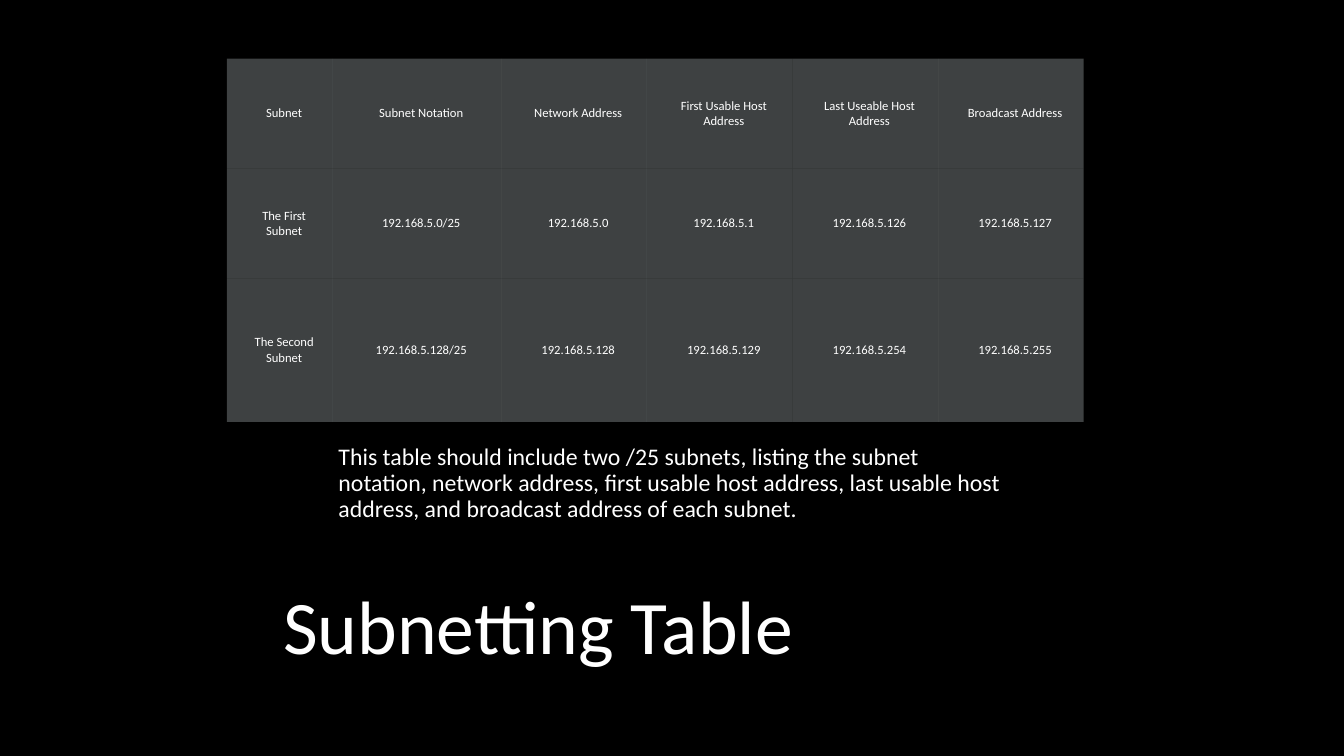
from dataclasses import dataclass

from lxml import etree
from pptx import Presentation
from pptx.dml.color import RGBColor
from pptx.enum.text import MSO_ANCHOR, MSO_AUTO_SIZE, PP_ALIGN
from pptx.oxml.ns import qn
from pptx.util import Cm, Pt

MIDDLE = MSO_ANCHOR.MIDDLE
NO_AUTOFIT = MSO_AUTO_SIZE.NONE
LEFT = PP_ALIGN.LEFT
CENTER = PP_ALIGN.CENTER

FONT = "Calibri"
COLORS = {"background": "000000", "text": "FFFFFF", "cell": "B4BCBE"}
CELL_OPACITY = 35
PLAIN_TABLE_STYLE = "{2D5ABB26-0587-4C30-8999-92F81FD0307C}"
ROW_HEIGHTS = (2.77, 2.77, 3.61)
CAPTION = (
    "This table should include two /25 subnets, listing the subnet notation, "
    "network address, first usable host address, last usable host address, "
    "and broadcast address of each subnet."
)


@dataclass(frozen=True)
class Column:
    width: float
    texts: tuple[str, str, str]


COLUMNS = (
    Column(2.67, ("Subnet", "The First Subnet", "The Second Subnet")),
    Column(4.24, ("Subnet Notation", "192.168.5.0/25", "192.168.5.128/25")),
    Column(3.67, ("Network Address", "192.168.5.0", "192.168.5.128")),
    Column(3.67, ("First Usable Host Address", "192.168.5.1", "192.168.5.129")),
    Column(3.67, ("Last Useable Host Address", "192.168.5.126", "192.168.5.254")),
    Column(3.67, ("Broadcast Address", "192.168.5.127", "192.168.5.255")),
)


def write_text(text_frame, text: str, *, size: float, align=LEFT,
               line_spacing: float = 1.0, space_after: float = 0) -> None:
    text_frame.word_wrap = True
    paragraph = text_frame.paragraphs[0]
    paragraph.text = text
    paragraph.alignment = align
    paragraph.line_spacing = line_spacing
    paragraph.space_before = Pt(0)
    paragraph.space_after = Pt(space_after)
    font = paragraph.runs[0].font
    font.name = FONT
    font.size = Pt(size)
    font.color.rgb = RGBColor.from_string(COLORS["text"])


def draw_cell(cell, text: str) -> None:
    cell.vertical_anchor = MIDDLE
    cell.margin_left = Cm(0.44)
    cell.margin_right = cell.margin_top = cell.margin_bottom = Cm(0.23)
    write_text(cell.text_frame, text, size=9, align=CENTER)
    cell.fill.solid()
    cell.fill.fore_color.rgb = RGBColor.from_string(COLORS["cell"])
    color = cell._tc.tcPr.find(f".//{qn('a:srgbClr')}")
    etree.SubElement(color, qn("a:alpha"), val=str(CELL_OPACITY * 1000))


def draw_subnet_table(slide) -> None:
    width = sum(column.width for column in COLUMNS)
    table = slide.shapes.add_table(
        len(ROW_HEIGHTS), len(COLUMNS),
        Cm(5.72), Cm(1.48), Cm(width), Cm(sum(ROW_HEIGHTS)),
    ).table
    table.horz_banding = False
    table._tbl.tblPr.find(qn("a:tableStyleId")).text = PLAIN_TABLE_STYLE
    for row, height in zip(table.rows, ROW_HEIGHTS):
        row.height = Cm(height)
    for column_index, column in enumerate(COLUMNS):
        table.columns[column_index].width = Cm(column.width)
        for row_index, text in enumerate(column.texts):
            draw_cell(table.cell(row_index, column_index), text)


def draw_title(slide) -> None:
    title = slide.shapes.title
    title.left, title.top = Cm(6.88), Cm(14.45)
    title.width, title.height = Cm(20.62), Cm(2.87)
    title.text_frame.auto_size = NO_AUTOFIT
    title.text_frame.vertical_anchor = MIDDLE
    write_text(title.text_frame, "Subnetting Table", size=54,
               line_spacing=0.9, space_after=6)


def draw_caption(slide) -> None:
    caption = slide.shapes.add_textbox(Cm(8.28), Cm(10.64), Cm(17.35), Cm(3.1))
    caption.text_frame.vertical_anchor = MIDDLE
    write_text(caption.text_frame, CAPTION, size=17, line_spacing=0.9)


def main() -> None:
    presentation = Presentation()
    presentation.slide_width = Cm(33.87)
    presentation.slide_height = Cm(19.05)
    slide = presentation.slides.add_slide(presentation.slide_layouts[5])
    slide.background.fill.solid()
    slide.background.fill.fore_color.rgb = RGBColor.from_string(COLORS["background"])
    draw_title(slide)
    draw_caption(slide)
    draw_subnet_table(slide)
    presentation.save("out.pptx")


if __name__ == "__main__":
    main()
